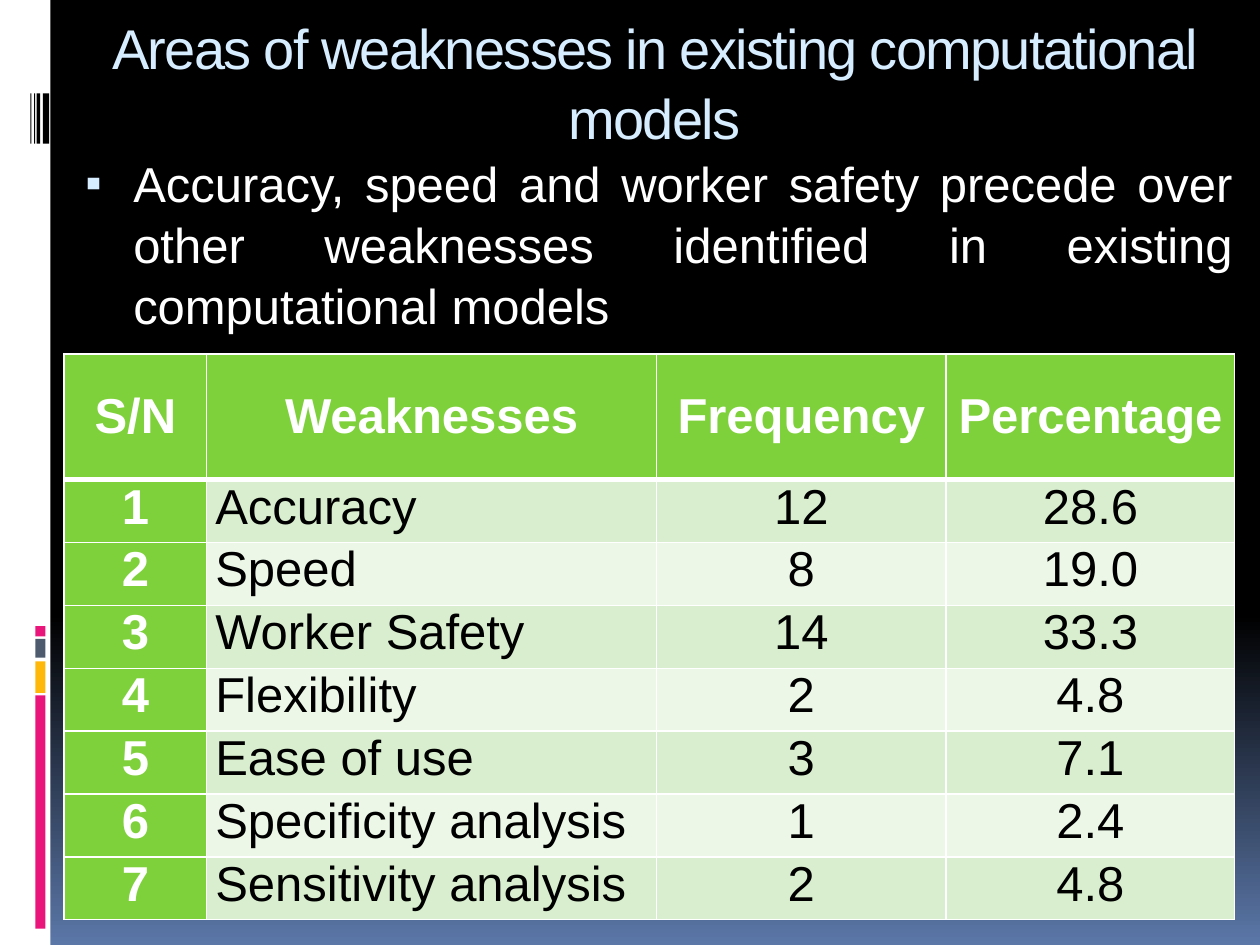
"""Build the slide on areas of weakness in existing computational models."""
from lxml.etree import SubElement as Sub
from pptx import Presentation
from pptx.dml.color import RGBColor as Rgb
from pptx.enum.shapes import MSO_SHAPE as Kind
from pptx.enum.text import MSO_ANCHOR as Anchor, MSO_AUTO_SIZE as Auto, PP_ALIGN as Align
from pptx.oxml import parse_xml
from pptx.oxml.ns import nsdecls, qn
from pptx.util import Inches, Pt

HUES = {
    "black": "000000", "white": "FFFFFF", "base": "5B77A8", "sky": "D6ECFF",
    "pink": "EA157A", "gold": "FEB80A", "slate": "4E5B6F",
    "green": "7FD13B", "odd": "D8EECE", "even": "ECF7E8",
}

deck = Presentation()
deck.slide_width, deck.slide_height = Inches(10), Inches(7.5)


def share(*box):
    sides = (deck.slide_width, deck.slide_height) * 2
    return [int(side * part / 100) for side, part in zip(sides, box)]


def write(frame, text, size, hue, align, bold=False):
    para = frame.paragraphs[0]
    para.alignment = align
    run = para.add_run()
    run.text = text
    for key, val in {"name": "Arial", "size": Pt(size), "bold": bold}.items():
        setattr(run.font, key, val)
    run.font.color.rgb = Rgb.from_string(HUES[hue])
    return para


slide = deck.slides.add_slide(deck.slide_layouts[5])
back = slide.background.fill
back.gradient()
back.gradient_angle = 270
for stop, (spot, hue) in zip(back.gradient_stops, [(0.65, "black"), (1, "base")]):
    stop.position = spot
    stop.color.rgb = Rgb.from_string(HUES[hue])

bars = [
    (0, 0, 4, 100, "white"),
    (2.8, 73.6, 0.8, 24.67, "pink"),
    (2.8, 70, 0.8, 3.33, "gold"),
    (2.8, 67.6, 0.8, 2, "slate"),
    (2.8, 66.27, 0.8, 1.07, "pink"),
]
bars += [(x, 9.87, w, 5.33, "black")
         for x, w in [(3.4, 0.5), (2.9, 0.3), (2.7, 0.1), (2.4, 0.1)]]
for *box, hue in bars:
    bar = slide.shapes.add_shape(Kind.RECTANGLE, *share(*box))
    bar.shadow.inherit = False
    bar.fill.solid()
    bar.fill.fore_color.rgb = Rgb.from_string(HUES[hue])
    bar.line.fill.background()

title = slide.shapes.title
for key, val in zip(("left", "top", "width", "height"), share(5.1, 0.4, 93.7, 13.87)):
    setattr(title, key, val)
body = slide.shapes.add_textbox(*share(5.1, 15.33, 93.7, 82.93))
frames = {"word_wrap": True, "auto_size": Auto.NONE, "vertical_anchor": Anchor.TOP}
for shape in (title, body):
    for key, val in frames.items():
        setattr(shape.text_frame, key, val)

head = write(title.text_frame, "Areas of weaknesses in existing computational models",
             32, "sky", Align.CENTER)
head.line_spacing = 1.05
head.runs[0].font._element.set("spc", "-100")

point = write(body.text_frame, "Accuracy, speed and worker safety precede over other "
              "weaknesses identified in existing computational models",
              28, "white", Align.JUSTIFY)
point.line_spacing = 1.04
point.space_before = Pt(7)
props = point._p.get_or_add_pPr()
props.set("marL", str(Inches(0.45)))
props.set("indent", str(Inches(-0.38)))
Sub(Sub(props, qn("a:buClr")), qn("a:srgbClr"), val=HUES["sky"])
Sub(props, qn("a:buSzPct"), val="95000")
Sub(props, qn("a:buFont"), typeface="Arial")
Sub(props, qn("a:buChar"), char="▪")

rows = [
    ("S/N", "Weaknesses", "Frequency", "Percentage"),
    ("1", "Accuracy", "12", "28.6"),
    ("2", "Speed", "8", "19.0"),
    ("3", "Worker Safety", "14", "33.3"),
    ("4", "Flexibility", "2", "4.8"),
    ("5", "Ease of use", "3", "7.1"),
    ("6", "Specificity analysis", "1", "2.4"),
    ("7", "Sensitivity analysis", "2", "4.8"),
]
wides = (11.3, 35.7, 23, 22.9)
unit = 59.87 / (len(rows) + 1)
table = slide.shapes.add_table(len(rows), len(wides), *share(5.1, 37.47, 92.9, 59.87)).table
for col, wide in zip(table.columns, wides):
    col.width = share(wide)[0]
for r, row in enumerate(rows):
    table.rows[r].height = share(0, unit * (1 if r else 2))[1]
    for c, text in enumerate(row):
        cell = table.cell(r, c)
        key = r == 0 or c == 0
        form = {
            "margin_left": Inches(0.07), "margin_right": Inches(0.07),
            "margin_top": 0, "margin_bottom": 0,
            "vertical_anchor": Anchor.TOP if r else Anchor.MIDDLE,
        }
        for name, val in form.items():
            setattr(cell, name, val)
        cell.fill.solid()
        tint = "green" if key else "odd" if r % 2 else "even"
        cell.fill.fore_color.rgb = Rgb.from_string(HUES[tint])
        write(cell.text_frame, text, 28, "white" if key else "black",
              Align.LEFT if r and c == 1 else Align.CENTER, key)
        for n, side in enumerate("LRTB"):
            thick = 3 if (r, side) in ((0, "B"), (1, "T")) else 1
            edge = parse_xml(f'<a:ln{side} {nsdecls("a")} w="{Pt(thick)}"><a:solidFill>'
                             f'<a:srgbClr val="{HUES["white"]}"/></a:solidFill></a:ln{side}>')
            cell._tc.get_or_add_tcPr().insert(n, edge)

deck.save("out.pptx")
